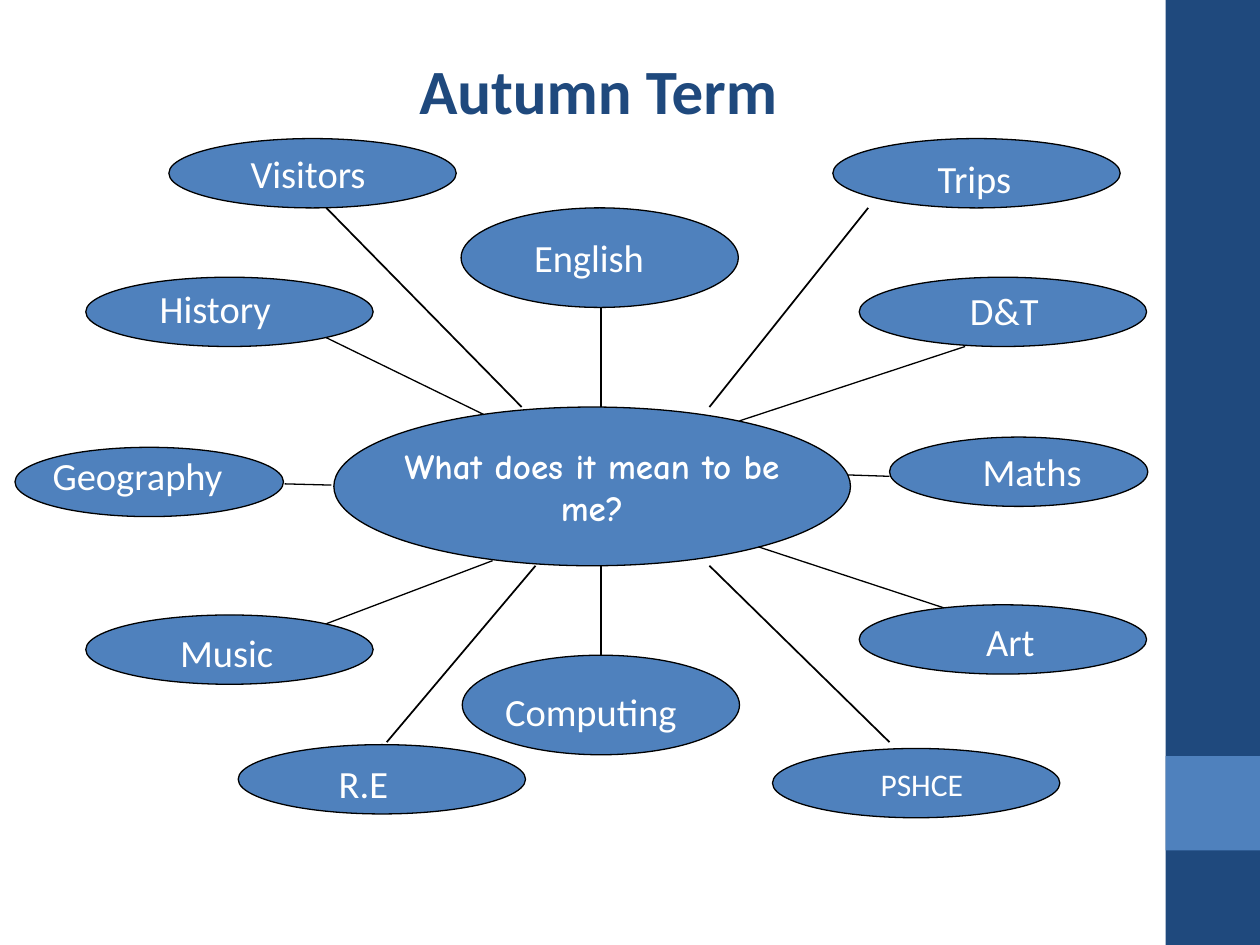
"""Build the Autumn Term topic web slide."""
from pptx import Presentation
from pptx.dml.color import RGBColor
from pptx.enum.shapes import MSO_CONNECTOR, MSO_SHAPE
from pptx.enum.text import MSO_ANCHOR, PP_ALIGN
from pptx.oxml.ns import qn
from pptx.util import Pt
from lxml.etree import SubElement

COLORS = {"navy": "1F497D", "blue": "4F81BD", "black": "000000", "white": "FFFFFF"}
TITLE = "Autumn Term"
QUESTION = ["What does it mean to be", "me?"]
CENTRE = (190.8, 232.6, 295.2, 90.7)
BARS = [("navy", (666, 0, 54, 540)), ("blue", (666, 432, 54, 54))]
WIDE, TALL = (164.2, 39.6), (158.4, 56.9)

# topic, oval corner, oval size, label corner and width, spoke start and end, spoke width
TOPICS = [
    ("Visitors", (96.5, 79.2), WIDE, (136.1, 82.1, 80.6), (298.1, 232.6, 186.5, 118.8), 1),
    ("Trips", (475.9, 79.2), WIDE, (523.4, 85, 67), (405.4, 232.6, 496.1, 118.8), 1),
    ("English", (263.5, 118.8), TALL, (298.1, 130.3, 77.8), (343.4, 232.6, 343.4, 175.7), 0.75),
    ("History", (49, 158.4), WIDE, (84.2, 159.1, 108), (276.5, 236.9, 186.5, 193), 0.75),
    ("D&T", (491, 158.4), WIDE, (547.2, 160.6, 108), (422.6, 240.5, 551.5, 198), 0.75),
    ("Geography", (8.6, 255.6), (153.4, 39.6), (23, 254.9, 112.3), (189.4, 277.2, 162.7, 276.5), 0.75),
    ("Maths", (508.3, 249.8), (147.6, 39.6), (554.4, 252.7, 71.3), (484.6, 271.4, 508.3, 272.2), 0.75),
    ("Music", (49, 351.4), WIDE, (95.8, 355.7, 108), (281.5, 320.4, 186.5, 356.4), 0.75),
    ("Art", (491, 345.6), WIDE, (523.4, 349.9, 108), (433.4, 312.5, 540.7, 347.8), 0.75),
    ("Computing", (264.2, 374.4), TALL, (281.5, 389.5, 113.8), (343.4, 323.3, 343.4, 374.4), 0.75),
    ("R.E", (136.1, 425.5), WIDE, (186.5, 430.6, 43.2), (306, 323.3, 221, 424.1), 1),
    ("PSHCE", (441.4, 427.7), WIDE, (496.1, 433.4, 61.9), (405.4, 323.3, 508.3, 424.1), 1),
]
WRAPPED = {"History", "Music", "D&T", "Art", "Trips"}
CENTRED = {"Art", "Trips"}
SMALL = {"PSHCE"}

LABEL_FONT = {"name": "Calibri", "size": Pt(22), "bold": False}
SMALL_FONT = {**LABEL_FONT, "size": Pt(18)}
TITLE_FONT = {"name": "Calibri", "size": Pt(36), "bold": True}
QUESTION_FONT = {"name": "Comic Neue", "size": Pt(20), "bold": True}


def points(values):
    return [Pt(value) for value in values]


def rgb(color):
    return RGBColor.from_string(COLORS[color])


def write(holder, lines, font, color, align, frame_format):
    frame = holder.text_frame
    for key, value in frame_format.items():
        setattr(frame, key, value)
    frame.text = "\n".join(lines)
    for paragraph in frame.paragraphs:
        paragraph.alignment = align
        for key, value in font.items():
            setattr(paragraph.font, key, value)
        paragraph.font.color.rgb = rgb(color)


def add_filled(slide, kind, place, color, outlined):
    shape = slide.shapes.add_shape(kind, *points(place))
    shape.shadow.inherit = False
    shape.fill.solid()
    shape.fill.fore_color.rgb = rgb(color)
    if outlined:
        shape.line.color.rgb = rgb("black")
        shape.line.width = Pt(0.75)
    else:
        shape.line.fill.background()
    return shape


def add_spoke(slide, ends, width):
    spoke = slide.shapes.add_connector(MSO_CONNECTOR.STRAIGHT, *points(ends))
    spoke.line.color.rgb = rgb("black")
    spoke.line.width = Pt(width)
    SubElement(spoke._element.spPr, qn("a:effectLst"))


def add_label(slide, topic, place):
    small = topic in SMALL
    label = slide.shapes.add_textbox(*points((*place, 28.8 if small else 33.8)))
    write(label, [topic], SMALL_FONT if small else LABEL_FONT, "white",
          PP_ALIGN.CENTER if topic in CENTRED else PP_ALIGN.LEFT,
          {"word_wrap": topic in WRAPPED})


def main():
    deck = Presentation()
    deck.slide_width, deck.slide_height = Pt(720), Pt(540)
    slide = deck.slides.add_slide(deck.slide_layouts[5])

    title = slide.shapes.title
    title.left, title.top, title.width, title.height = points((55.7, 25.9, 572.4, 51.1))
    write(title, [TITLE], TITLE_FONT, "navy", PP_ALIGN.CENTER,
          {"word_wrap": True, "vertical_anchor": MSO_ANCHOR.TOP})

    for color, place in BARS:
        add_filled(slide, MSO_SHAPE.RECTANGLE, place, color, False)

    question = add_filled(slide, MSO_SHAPE.OVAL, CENTRE, "blue", True)
    write(question, QUESTION, QUESTION_FONT, "white", PP_ALIGN.CENTER,
          {"word_wrap": False, "vertical_anchor": MSO_ANCHOR.MIDDLE})

    for topic, corner, size, label_place, ends, width in TOPICS:
        add_spoke(slide, ends, width)
        add_filled(slide, MSO_SHAPE.OVAL, corner + size, "blue", True)
        add_label(slide, topic, label_place)

    deck.save("out.pptx")


if __name__ == "__main__":
    main()
